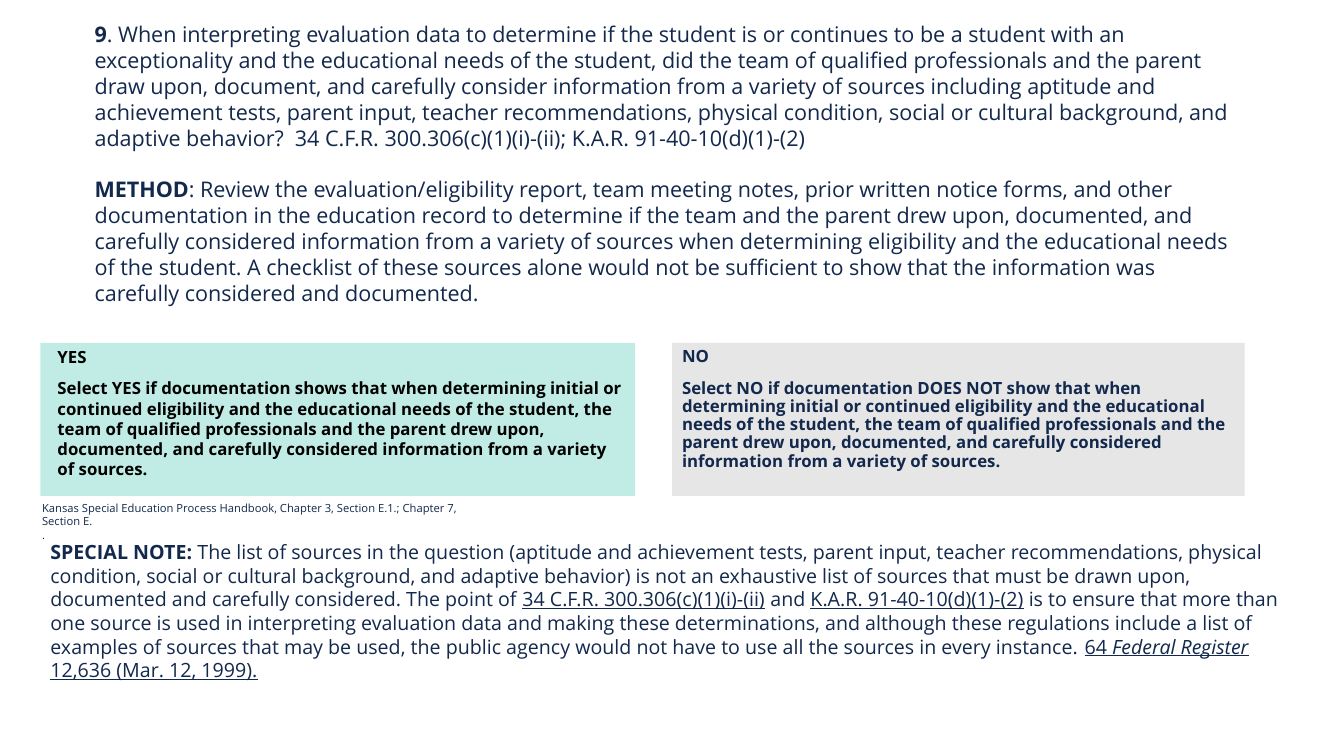
from dataclasses import dataclass

from lxml.etree import SubElement
from pptx import Presentation
from pptx.dml.color import RGBColor
from pptx.enum.shapes import MSO_SHAPE
from pptx.enum.text import MSO_ANCHOR, MSO_AUTO_SIZE, PP_ALIGN
from pptx.oxml.ns import qn
from pptx.util import Cm, Pt


@dataclass(frozen=True)
class Theme:
    """Hold the colours, font and type sizes of the slide."""
    face: str = "Open Sans"
    navy: str = "12284C"
    black: str = "000000"
    mint: str = "C1ECE5"
    grey: str = "E6E6E6"
    body: float = 15.4
    card: float = 12
    note: float = 14
    foot: float = 8


THEME = Theme()

QUESTION = [
    ("9", "b"),
    (". When interpreting evaluation data to determine if the student is or continues to be "
     "a student with an exceptionality and the educational needs of the student, did the team "
     "of qualified professionals and the parent draw upon, document, and carefully consider "
     "information from a variety of sources including aptitude and achievement tests, parent "
     "input, teacher recommendations, physical condition, social or cultural background, and "
     "adaptive behavior?  34 C.F.R. 300.306(c)(1)(i)-(ii); K.A.R. 91-40-10(d)(1)-(2)", ""),
]
METHOD = [
    ("METHOD", "b"),
    (": Review the evaluation/eligibility report, team meeting notes, prior written notice "
     "forms, and other documentation in the education record to determine if the team and the "
     "parent drew upon, documented, and carefully considered information from a variety of "
     "sources when determining eligibility and the educational needs of the student. "
     "A checklist of these sources alone would not be sufficient to show that the information "
     "was carefully considered and documented.", ""),
]
CHOICE = (
    "Select {} if documentation {} that when determining initial or continued eligibility and "
    "the educational needs of the student, the team of qualified professionals and the parent "
    "drew upon, documented, and carefully considered information from a variety of sources."
)
SOURCE = "Kansas Special Education Process Handbook, Chapter 3, Section E.1.; Chapter 7, Section E."
NOTE = [
    ("SPECIAL NOTE:", "b"),
    (" The list of sources in the question (aptitude and achievement tests, parent input, "
     "teacher recommendations, physical condition, social or cultural background, and adaptive "
     "behavior) is not an exhaustive list of sources that must be drawn upon, documented and "
     "carefully considered. The point of ", ""),
    ("34 C.F.R. 300.306(c)(1)(i)-(ii)", "u"),
    (" and ", ""),
    ("K.A.R. 91-40-10(d)(1)-(2)", "u"),
    (" is to ensure that more than one source is used in interpreting evaluation data and "
     "making these determinations, and although these regulations include a list of examples "
     "of sources that may be used, the public agency would not have to use all the sources in "
     "every instance. ", ""),
    ("64 ", "u"),
    ("Federal Register", "ui"),
    (" 12,636 (Mar. 12, 1999).", "u"),
]


def write(frame, paras, size, color=THEME.navy, bold=False, gap=0, lead=1.0, left=0):
    """Fill a frame with paragraphs, each a list of (text, marks) runs."""
    frame.word_wrap = True
    frame.auto_size = MSO_AUTO_SIZE.NONE
    frame.vertical_anchor = MSO_ANCHOR.TOP
    for num, runs in enumerate(paras):
        para = frame.add_paragraph() if num else frame.paragraphs[0]
        props = para._p.get_or_add_pPr()
        props.set("marL", str(left))
        props.set("indent", "0")
        SubElement(props, qn("a:buNone"))
        para.alignment = PP_ALIGN.LEFT
        para.line_spacing = lead
        para.space_before = Pt(gap if num else 0)
        para.font.name = THEME.face
        para.font.size = Pt(size)
        para.font.bold = bold
        para.font.color.rgb = RGBColor.from_string(color)
        for text, marks in runs:
            run = para.add_run()
            run.text = text
            if "b" in marks:
                run.font.bold = True
            if "i" in marks:
                run.font.italic = True
            if "u" in marks:
                run.font.underline = True


def add_body(slide, area, paras):
    """Place the question and method in the body placeholder."""
    body = slide.placeholders[1]
    body.left, body.top, body.width, body.height = map(Cm, area)
    write(body.text_frame, paras, THEME.body, gap=18.4)


def add_card(slide, area, fill, head, verb, **style):
    """Draw one answer card with its heading and rule."""
    card = slide.shapes.add_shape(MSO_SHAPE.RECTANGLE, *map(Cm, area))
    card.shadow.inherit = False
    card.fill.solid()
    card.fill.fore_color.rgb = RGBColor.from_string(fill)
    card.line.fill.background()
    paras = [[(head, "")], [(CHOICE.format(head, verb), "")]]
    write(card.text_frame, paras, THEME.card, bold=True, **style)
    return card


def add_text(slide, area, paras, size):
    """Place a plain text box."""
    box = slide.shapes.add_textbox(*map(Cm, area))
    write(box.text_frame, paras, size)


def main():
    """Build and save the slide."""
    deck = Presentation()
    deck.slide_width, deck.slide_height = Cm(33.87), Cm(19.05)
    slide = deck.slides.add_slide(deck.slide_layouts[1])
    title = slide.shapes.title.element
    title.getparent().remove(title)

    add_body(slide, (2.13, 0.41, 29.21, 8.23), [QUESTION, METHOD])
    yes = add_card(slide, (1.02, 8.64, 14.99, 3.86), THEME.mint, "YES", "shows",
                   color=THEME.black, gap=8, left=Cm(0.25))
    frame = yes.text_frame
    frame.margin_left = frame.margin_right = Cm(0.18)
    frame.margin_top = frame.margin_bottom = Cm(0.1)
    add_card(slide, (16.94, 8.64, 14.43, 3.86), THEME.grey, "NO", "DOES NOT show",
             gap=10, lead=0.9)
    add_text(slide, (0.81, 12.5, 11.7, 0.94), [[(SOURCE, "")], [(".", "")]], THEME.foot)
    add_text(slide, (1.02, 13.49, 31.52, 3.25), [NOTE], THEME.note)
    deck.save("out.pptx")


if __name__ == "__main__":
    main()
